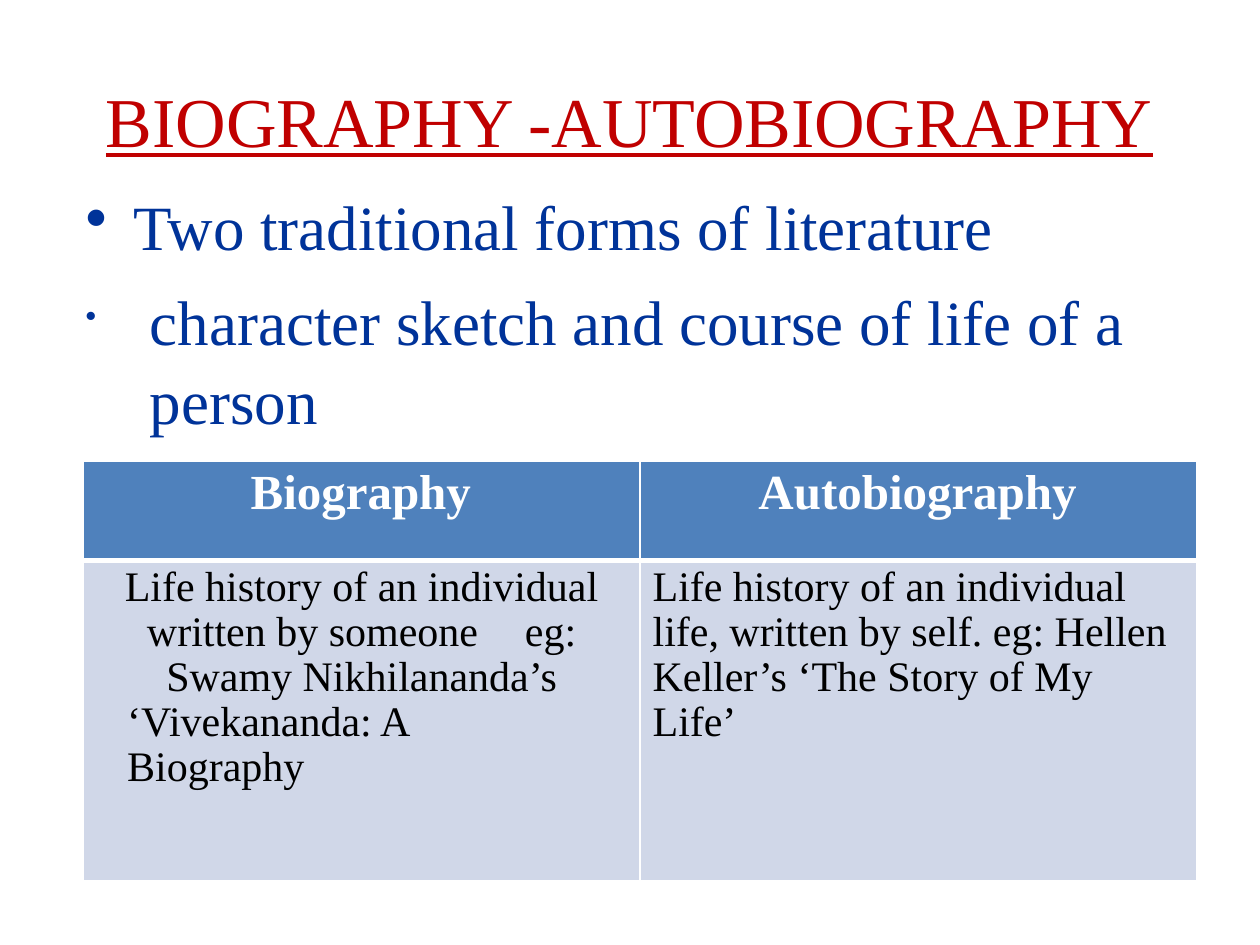
from dataclasses import dataclass

from lxml import etree
from pptx import Presentation
from pptx.dml.color import RGBColor
from pptx.enum.text import MSO_ANCHOR, PP_ALIGN
from pptx.oxml.ns import qn
from pptx.util import Inches, Length, Pt

CENTER = PP_ALIGN.CENTER
LEFT = PP_ALIGN.LEFT
MIDDLE = MSO_ANCHOR.MIDDLE
TOP = MSO_ANCHOR.TOP

FONT = "Times New Roman"
COLORS = {
    "title": "C00000",
    "bullets": "003399",
    "header": "4F81BC",
    "body": "D0D7E8",
    "white": "FFFFFF",
    "black": "000000",
}


@dataclass(frozen=True)
class Line:
    """One paragraph; margins, first-line indent and tab stop are in inches."""
    text: str
    size: int
    color: str
    bold: bool = False
    underline: bool = False
    align: PP_ALIGN = LEFT
    margin: float = 0
    indent: float = 0
    right: float = 0
    before: float = 0
    spacing: float = 1
    bullet_percent: int = 0
    tab: float = 0


@dataclass(frozen=True)
class Cell:
    lines: tuple[Line, ...]
    fill: str
    top_border: float
    bottom_border: float


def rgb(name: str) -> RGBColor:
    return RGBColor.from_string(COLORS[name])


def add_child(parent, tag: str, **attributes):
    return etree.SubElement(parent, qn(tag), attributes)


def write_line(para, line: Line) -> None:
    para.alignment = line.align
    para.space_before = Pt(line.before)
    para.line_spacing = line.spacing
    props = para._p.get_or_add_pPr()
    for name, value in (("marL", line.margin), ("marR", line.right), ("indent", line.indent)):
        props.set(name, str(Inches(value)))
    if line.bullet_percent:
        add_child(props, "a:buSzPct", val=str(line.bullet_percent * 1000))
        add_child(props, "a:buChar", char="•")
    if line.tab:
        stops = add_child(props, "a:tabLst")
        add_child(stops, "a:tab", pos=str(Inches(line.tab)), algn="l")
    font = para.font
    font.name, font.size = FONT, Pt(line.size)
    font.bold, font.underline = line.bold, line.underline
    font.color.rgb = rgb(line.color)
    para.add_run().text = line.text


def write_lines(frame, lines: tuple[Line, ...]) -> None:
    for index, line in enumerate(lines):
        write_line(frame.add_paragraph() if index else frame.paragraphs[0], line)


def add_text(page, left: Length, top: Length, width: Length, height: Length,
             lines: tuple[Line, ...], anchor=TOP) -> None:
    frame = page.shapes.add_textbox(left, top, width, height).text_frame
    frame.word_wrap = True
    frame.vertical_anchor = anchor
    frame.margin_left = frame.margin_right = frame.margin_top = frame.margin_bottom = 0
    write_lines(frame, lines)


def fill_cell(target, cell: Cell) -> None:
    target.margin_left = target.margin_right = target.margin_bottom = 0
    target.margin_top = Inches(0.04)
    borders = {"a:lnL": 1, "a:lnR": 1, "a:lnT": cell.top_border, "a:lnB": cell.bottom_border}
    for tag, width in borders.items():
        border = add_child(target._tc.get_or_add_tcPr(), tag, w=str(Pt(width)))
        add_child(add_child(border, "a:solidFill"), "a:srgbClr", val=COLORS["white"])
    target.fill.solid()
    target.fill.fore_color.rgb = rgb(cell.fill)
    write_lines(target.text_frame, cell.lines)


def header_cell(text: str, margin: float) -> Cell:
    return Cell((Line(text, 28, "white", bold=True, margin=margin),), "header", 1, 3)


def body_line(text: str, **layout) -> Line:
    return Line(text, 24, "black", spacing=0.97, **layout)


def body_cell(*lines: Line) -> Cell:
    return Cell(lines, "body", 3, 1)


TITLE = Line("BIOGRAPHY -AUTOBIOGRAPHY", 40, "title", underline=True)
BULLETS = (
    Line("Two traditional forms of literature", 36, "bullets",
         margin=0.39, indent=-0.38, bullet_percent=100),
    Line("character sketch and course of life of a person", 36, "bullets",
         margin=0.52, indent=-0.51, before=8.7, spacing=1.05, bullet_percent=50),
)
ROWS = (
    (header_cell("Biography", 1.33), header_cell("Autobiography", 0.94)),
    (
        body_cell(
            body_line("Life history of an individual", align=CENTER),
            body_line("written by someone\teg:", align=CENTER, tab=2.79),
            body_line("Swamy Nikhilananda’s ‘Vivekananda: A Biography",
                      margin=0.35, indent=0.31, right=0.5),
        ),
        body_cell(
            body_line("Life history of an individual life, written by self. eg: Hellen "
                      "Keller’s ‘The Story of My", margin=0.1),
            body_line("Life’", margin=0.1),
        ),
    ),
)
ROW_HEIGHTS = (0.79, 2.54)


def add_comparison(page) -> None:
    table = page.shapes.add_table(len(ROWS), len(ROWS[0]), Inches(0.66), Inches(3.66),
                                  Inches(8.84), Inches(sum(ROW_HEIGHTS))).table
    table.horz_banding = False
    for row, height, cells in zip(table.rows, ROW_HEIGHTS, ROWS):
        row.height = Inches(height)
        for target, cell in zip(row.cells, cells):
            fill_cell(target, cell)


def main() -> None:
    deck = Presentation()
    deck.slide_width, deck.slide_height = Inches(10), Inches(7.5)
    page = deck.slides.add_slide(deck.slide_layouts[6])
    add_text(page, Inches(0.84), Inches(0.6), Inches(8.4), Inches(0.69), (TITLE,), MIDDLE)
    add_text(page, Inches(0.67), Inches(1.49), Inches(8.26), Inches(1.9), BULLETS)
    add_comparison(page)
    deck.save("out.pptx")


if __name__ == "__main__":
    main()
